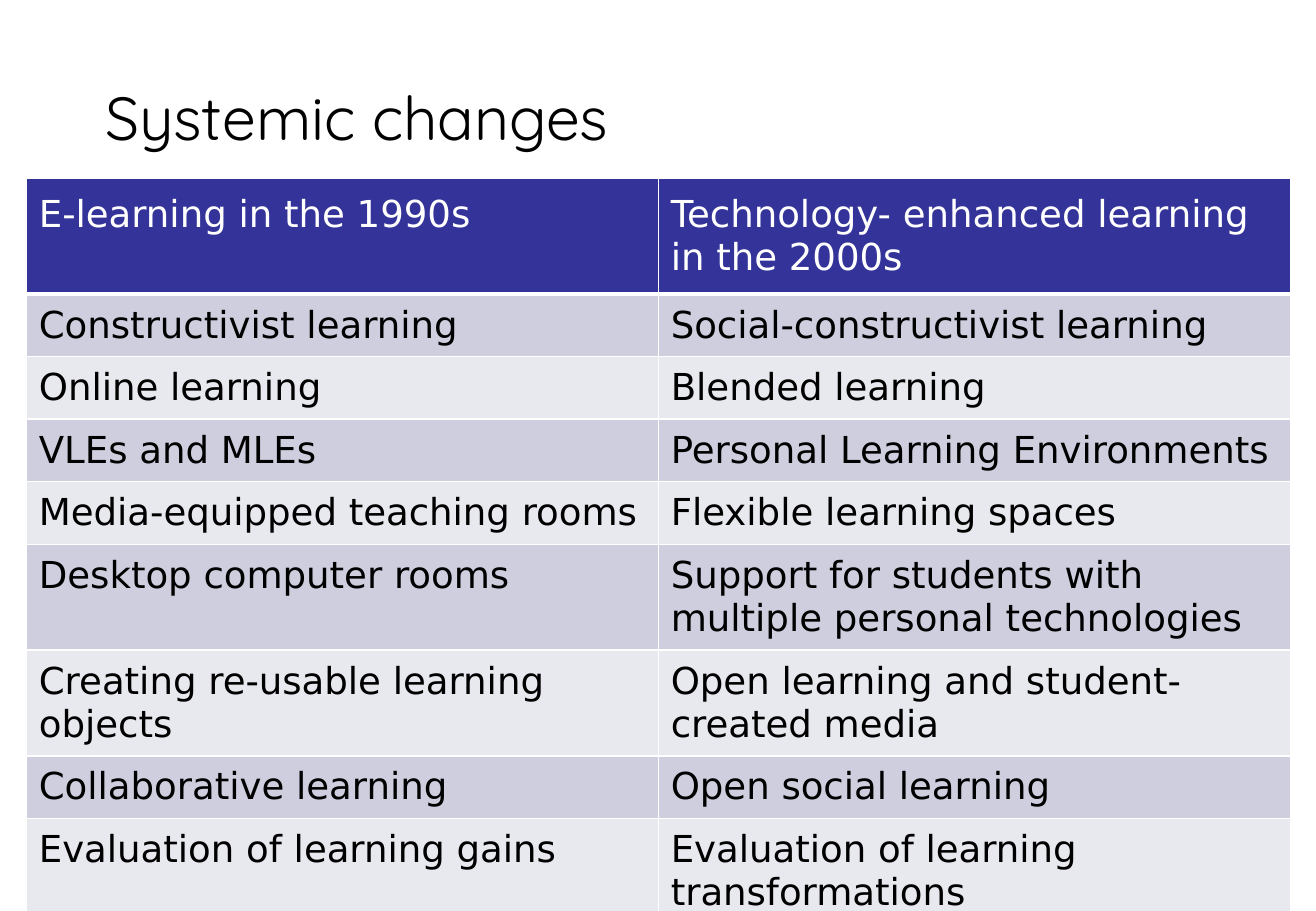
from dataclasses import dataclass

from lxml.etree import SubElement
from pptx import Presentation
from pptx.dml.color import RGBColor
from pptx.enum.text import MSO_ANCHOR, PP_ALIGN
from pptx.oxml.ns import qn
from pptx.util import Inches, Pt


@dataclass(frozen=True)
class Theme:
    title_font: str = "Quicksand"
    table_font: str = "DejaVu Sans"
    title_size: int = 36
    table_size: int = 22
    text: str = "000000"
    header_text: str = "FFFFFF"
    header_fill: str = "333399"
    band_fills: tuple = ("E8E8EF", "CECEDE")
    border: str = "FFFFFF"


THEME = Theme()
COMPARISON = [
    ("E-learning in the 1990s", "Technology- enhanced learning in the 2000s"),
    ("Constructivist learning", "Social-constructivist learning"),
    ("Online learning", "Blended learning"),
    ("VLEs and MLEs", "Personal Learning Environments"),
    ("Media-equipped teaching rooms", "Flexible learning spaces"),
    ("Desktop computer rooms", "Support for students with multiple personal technologies"),
    ("Creating re-usable learning objects", "Open learning and student-created media"),
    ("Collaborative learning", "Open social learning"),
    ("Evaluation of learning gains", "Evaluation of learning transformations"),
]


def style_paragraph(paragraph, font_name, size, color):
    paragraph.alignment = PP_ALIGN.LEFT
    paragraph.font.name = font_name
    paragraph.font.size = Pt(size)
    paragraph.font.bold = False
    paragraph.font.color.rgb = RGBColor.from_string(color)


def add_title(slide, text):
    box = slide.shapes.add_textbox(Inches(0.77), Inches(0.52), Inches(9.13), Inches(0.87))
    frame = box.text_frame
    frame.word_wrap = True
    frame.vertical_anchor = MSO_ANCHOR.MIDDLE
    frame.text = text
    style_paragraph(frame.paragraphs[0], THEME.title_font, THEME.title_size, THEME.text)


def set_borders(cell, bottom_width):
    """Draw all four sides; lines must precede the fill in the cell properties."""
    properties = cell._tc.get_or_add_tcPr()
    for side in ("L", "R", "T", "B"):
        width = bottom_width if side == "B" else 1
        line = SubElement(properties, qn(f"a:ln{side}"), w=str(Pt(width)))
        fill = SubElement(line, qn("a:solidFill"))
        SubElement(fill, qn("a:srgbClr"), val=THEME.border)


def fill_cell(cell, text, row_index):
    is_header = row_index == 0
    set_borders(cell, bottom_width=3 if is_header else 1)
    cell.fill.solid()
    fill_color = THEME.header_fill if is_header else THEME.band_fills[row_index % 2]
    cell.fill.fore_color.rgb = RGBColor.from_string(fill_color)
    cell.margin_left = cell.margin_right = Inches(0.1)
    cell.margin_top = cell.margin_bottom = Inches(0.12 if is_header else 0.08)
    cell.text = text
    text_color = THEME.header_text if is_header else THEME.text
    style_paragraph(cell.text_frame.paragraphs[0], THEME.table_font, THEME.table_size, text_color)


def add_comparison_table(slide, rows):
    """Rows start at a minimum height and grow with their text."""
    row_height = Inches(0.41)
    table = slide.shapes.add_table(
        len(rows), len(rows[0]), Inches(0.22), Inches(1.47), Inches(10.4), row_height * len(rows)
    ).table
    for row_index, texts in enumerate(rows):
        table.rows[row_index].height = row_height
        for column_index, text in enumerate(texts):
            fill_cell(table.cell(row_index, column_index), text, row_index)


def main():
    presentation = Presentation()
    presentation.slide_width = Inches(10.83)
    presentation.slide_height = Inches(7.5)
    slide = presentation.slides.add_slide(presentation.slide_layouts[6])
    add_comparison_table(slide, COMPARISON)
    add_title(slide, "Systemic changes")
    presentation.save("out.pptx")


if __name__ == "__main__":
    main()
